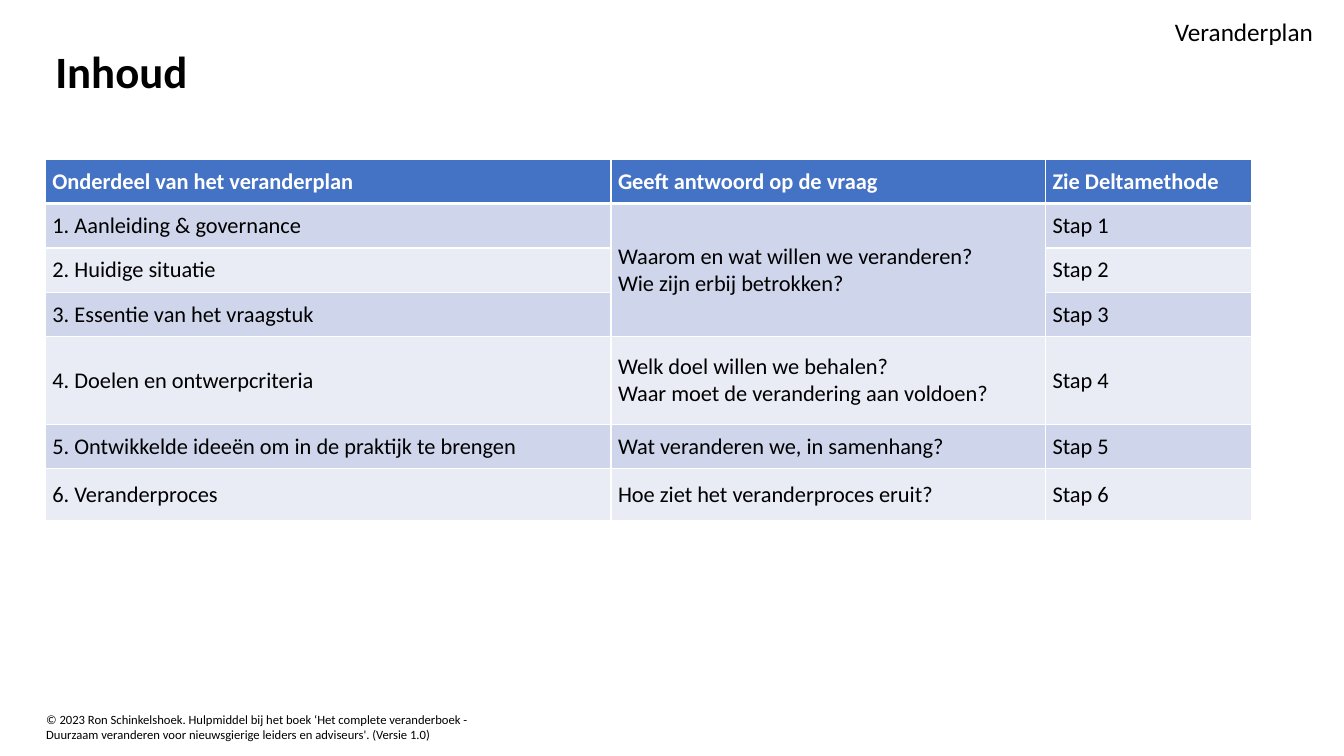
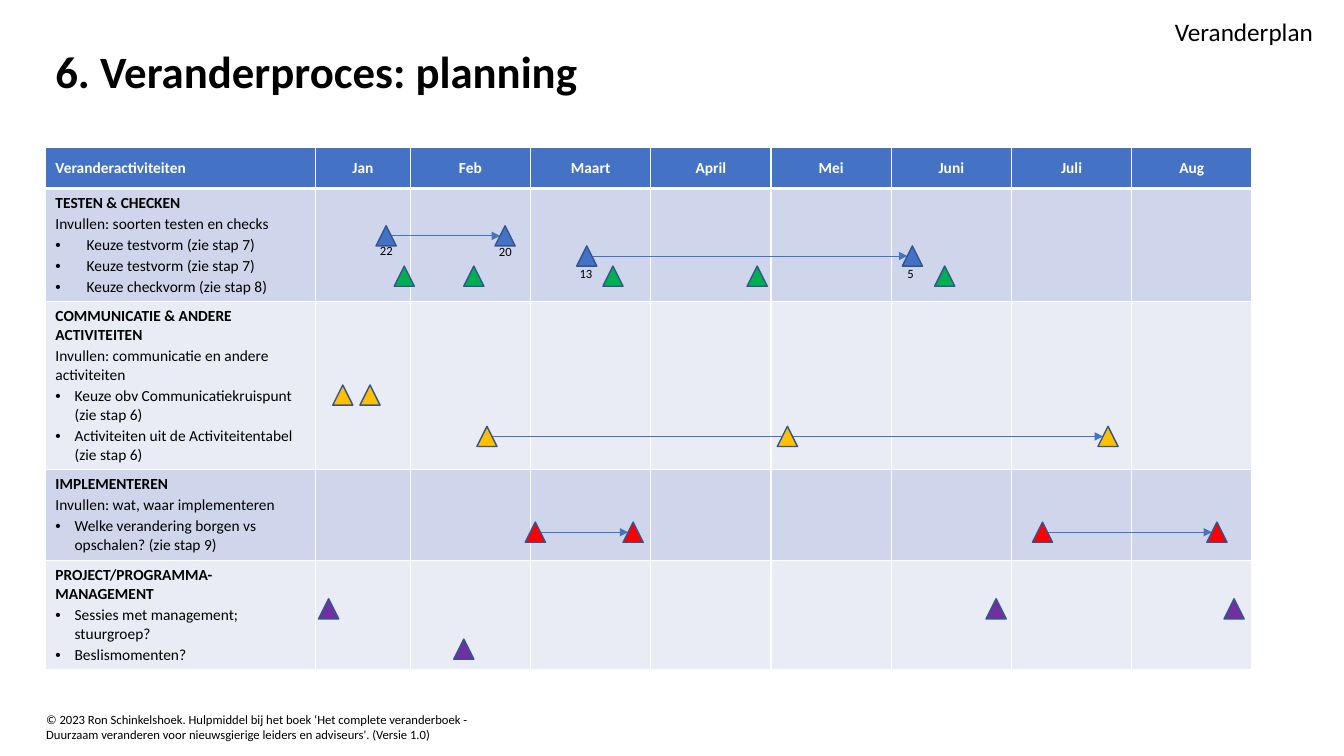
import pptx
import pptx.util
import pptx.dml.color
import pptx.enum.shapes
import pptx.enum.text
import pptx.oxml
import pptx.oxml.ns
from dataclasses import dataclass

Inches = pptx.util.Inches
Pt = pptx.util.Pt
Shape = pptx.enum.shapes.MSO_SHAPE
Align = pptx.enum.text.PP_ALIGN
Anchor = pptx.enum.text.MSO_ANCHOR
NS = pptx.oxml.ns.nsdecls("a")


@dataclass(frozen=True)
class Theme:
    font: str = "Calibri"
    ink: str = "000000"
    white: str = "FFFFFF"
    blue: str = "4472C4"
    edge: str = "325491"
    bands: tuple = ("CFD5EA", "E9EBF5")
    green: str = "00B050"
    gold: str = "FFC000"
    red: str = "FF0000"
    purple: str = "7030A0"
    title: int = 32
    label: int = 18
    body: int = 16
    small: int = 11
    tiny: int = 9


@dataclass(frozen=True)
class Para:
    text: str
    bold: bool = False
    indent: float = 0


def rgb(code):
    return pptx.dml.color.RGBColor.from_string(code)


def apply(target, values):
    for name, value in values.items():
        setattr(target, name, value)


def node(code):
    return pptx.oxml.parse_xml(code)


class Deck:
    side = 0.2
    footer = ("© 2023 Ron Schinkelshoek. Hulpmiddel bij het boek ‘Het complete veranderboek - "
              "Duurzaam veranderen voor nieuwsgierige leiders en adviseurs'. (Versie 1.0)")

    def __init__(self, theme):
        self.theme = theme
        self.show = pptx.Presentation()
        apply(self.show, {"slide_width": Inches(13.33), "slide_height": Inches(7.5)})
        self.slide = None

    def page(self, title):
        look = self.theme
        self.slide = self.show.slides.add_slide(self.show.slide_layouts[6])
        self.text((0.45, 0.4, 11.97, 0.66), title, look.title, bold=True, line_spacing=0.9)
        self.text((0.36, 7.01, 4.5, 0.4), self.footer, look.tiny)
        self.text((11.34, 0, 1.78, 0.66), "Veranderplan", look.label,
                  alignment=Align.RIGHT, line_spacing=0.9)

    def typeset(self, frame, paras, size, color, **form):
        for index, para in enumerate(paras):
            line = frame.paragraphs[0] if index == 0 else frame.add_paragraph()
            apply(line, form)
            run = line.add_run()
            run.text = para.text
            apply(run.font, {"name": self.theme.font, "size": Pt(size), "bold": para.bold})
            run.font.color.rgb = rgb(color)
            if para.indent:
                props = line._p.get_or_add_pPr()
                step = Inches(para.indent)
                props.set("marL", str(step))
                props.set("indent", str(-step))
                props.append(node(f'<a:buFont {NS} typeface="Arial"/>'))
                props.append(node(f'<a:buChar {NS} char="•"/>'))

    def text(self, box, words, size, bold=False, anchor=Anchor.MIDDLE, **form):
        frame = self.slide.shapes.add_textbox(*map(Inches, box)).text_frame
        apply(frame, {"word_wrap": True, "vertical_anchor": anchor})
        self.typeset(frame, [Para(words, bold)], size, self.theme.ink, **form)

    def border(self, cell, row):
        props = cell._tc.get_or_add_tcPr()
        widths = {"L": 1, "R": 1, "T": 3 if row == 1 else 1, "B": 3 if row == 0 else 1}
        for side, width in widths.items():
            props.append(node(
                f'<a:ln{side} {NS} w="{Pt(width)}"><a:solidFill>'
                f'<a:srgbClr val="{self.theme.white}"/></a:solidFill></a:ln{side}>'))

    def table(self, left, top, cols, rows, cells, size, inset, center=False, **form):
        look = self.theme
        box = map(Inches, (left, top, sum(cols), sum(rows)))
        grid = self.slide.shapes.add_table(len(rows), len(cols), *box).table
        for col, width in zip(grid.columns, cols):
            col.width = Inches(width)
        for row, height in zip(grid.rows, rows):
            row.height = Inches(height)
        across, down = map(Inches, inset)
        for r, line in enumerate(cells):
            for c in range(len(cols)):
                cell = grid.cell(r, c)
                apply(cell, {"vertical_anchor": Anchor.MIDDLE,
                             "margin_left": across, "margin_right": across,
                             "margin_top": down, "margin_bottom": down})
                self.border(cell, r)
                cell.fill.solid()
                cell.fill.fore_color.rgb = rgb(look.bands[(r - 1) % 2] if r else look.blue)
                paras = line[c] if c < len(line) else []
                if r:
                    self.typeset(cell.text_frame, paras, size, look.ink, **form)
                else:
                    place = Align.CENTER if center and c else Align.LEFT
                    self.typeset(cell.text_frame, paras, size, look.white, alignment=place)
        return grid

    def mark(self, x, y, color):
        shape = self.slide.shapes.add_shape(
            Shape.ISOSCELES_TRIANGLE, *map(Inches, (x, y, self.side, self.side)))
        shape.shadow.inherit = False
        shape.fill.solid()
        shape.fill.fore_color.rgb = rgb(color)
        shape.line.color.rgb = rgb(self.theme.edge)
        shape.line.width = Pt(1)

    def arrow(self, start, end, y):
        inner = self.side / 4
        mid = y + self.side / 2
        ends = map(Inches, (start + self.side - inner, mid, end + inner, mid))
        line = self.slide.shapes.add_connector(pptx.enum.shapes.MSO_CONNECTOR.STRAIGHT, *ends)
        line.line.color.rgb = rgb(self.theme.blue)
        line.line.width = Pt(0.5)
        props = line._element.spPr
        props.find(pptx.oxml.ns.qn("a:ln")).append(node(f'<a:tailEnd {NS} type="triangle"/>'))
        props.append(node(f'<a:effectLst {NS}/>'))

    def track(self, y, color, marks, spans=()):
        for start, end in spans:
            self.arrow(start, end, y)
        for x in marks:
            self.mark(x, y, color)


def plain(*lines):
    return [Para(line) for line in lines]


def head(*names):
    return [[Para(name, True)] for name in names]


def group(title, intro, items, indent=0.19):
    return [[Para(title, True), *plain(*intro), *(Para(item, indent=indent) for item in items)]]


def contents(deck):
    deck.page("Inhoud")
    parts = [
        ("1. Aanleiding & governance",
         ["Waarom en wat willen we veranderen?", "Wie zijn erbij betrokken?"]),
        ("2. Huidige situatie", []),
        ("3. Essentie van het vraagstuk", []),
        ("4. Doelen en ontwerpcriteria",
         ["Welk doel willen we behalen?", "Waar moet de verandering aan voldoen?"]),
        ("5. Ontwikkelde ideeën om in de praktijk te brengen",
         ["Wat veranderen we, in samenhang?"]),
        ("6. Veranderproces", ["Hoe ziet het veranderproces eruit?"]),
    ]
    cells = [head("Onderdeel van het veranderplan", "Geeft antwoord op de vraag",
                  "Zie Deltamethode")]
    for step, (part, asks) in enumerate(parts, 1):
        cells.append([plain(part), plain(*asks), plain(f"Stap {step}")])
    grid = deck.table(0.45, 1.58, [5.61, 4.31, 2.04],
                      [0.44] * 4 + [0.87, 0.44, 0.52], cells, deck.theme.body, (0.07, 0))
    grid.cell(1, 1).merge(grid.cell(3, 1))


def planning(deck):
    look = deck.theme
    deck.page("6. Veranderproces: planning")
    months = ["Jan", "Feb", "Maart", "April", "Mei", "Juni", "Juli", "Aug"]
    test = "Keuze testvorm (zie stap 7)"
    cells = [
        head("Veranderactiviteiten", *months),
        group("TESTEN & CHECKEN", ["Invullen: soorten testen en checks"],
              [test, test, "Keuze checkvorm (zie stap 8)"], 0.31),
        group("COMMUNICATIE & ANDERE ACTIVITEITEN",
              ["Invullen: communicatie en andere activiteiten"],
              ["Keuze obv Communicatiekruispunt (zie stap 6)",
               "Activiteiten uit de Activiteitentabel (zie stap 6)"]),
        group("IMPLEMENTEREN", ["Invullen: wat, waar implementeren"],
              ["Welke verandering borgen vs opschalen? (zie stap 9)"]),
        group("PROJECT/PROGRAMMA-MANAGEMENT", [],
              ["Sessies met management; stuurgroep?", "Beslismomenten?"]),
    ]
    first, short = 2.68, 0.94
    month = (11.97 - first - short) / 7
    deck.table(0.45, 1.46, [first, short] + [month] * 7, [0.41, 1.12, 1.67, 0.9, 1.08],
               cells, look.small, (0.1, 0.05), center=True, space_before=Pt(1.5))

    tracks = [
        (2.24, look.blue, [3.73, 4.91], [(3.73, 4.91)]),
        (2.44, look.blue, [5.72, 8.95], [(5.72, 8.95)]),
        (2.64, look.green, [3.91, 4.6, 5.98, 7.41, 9.27]),
        (3.82, look.gold, [3.3, 3.57]),
        (4.23, look.gold, [4.73, 7.71, 10.89], [(4.73, 10.89)]),
        (5.18, look.red, [5.21, 6.18, 10.24, 11.97], [(5.21, 6.18), (10.24, 11.97)]),
        (5.94, look.purple, [3.16, 9.78, 12.14]),
        (6.34, look.purple, [4.5]),
    ]
    for track in tracks:
        deck.track(*track)
    for x, y, day in [(3.67, 2.36, "22"), (4.85, 2.37, "20"), (5.65, 2.59, "13"),
                      (8.9, 2.59, "5")]:
        deck.text((x, y, 0.35, 0.25), day, look.tiny, anchor=Anchor.TOP)


def main():
    deck = Deck(Theme())
    contents(deck)
    planning(deck)
    deck.show.save("out.pptx")


if __name__ == "__main__":
    main()
